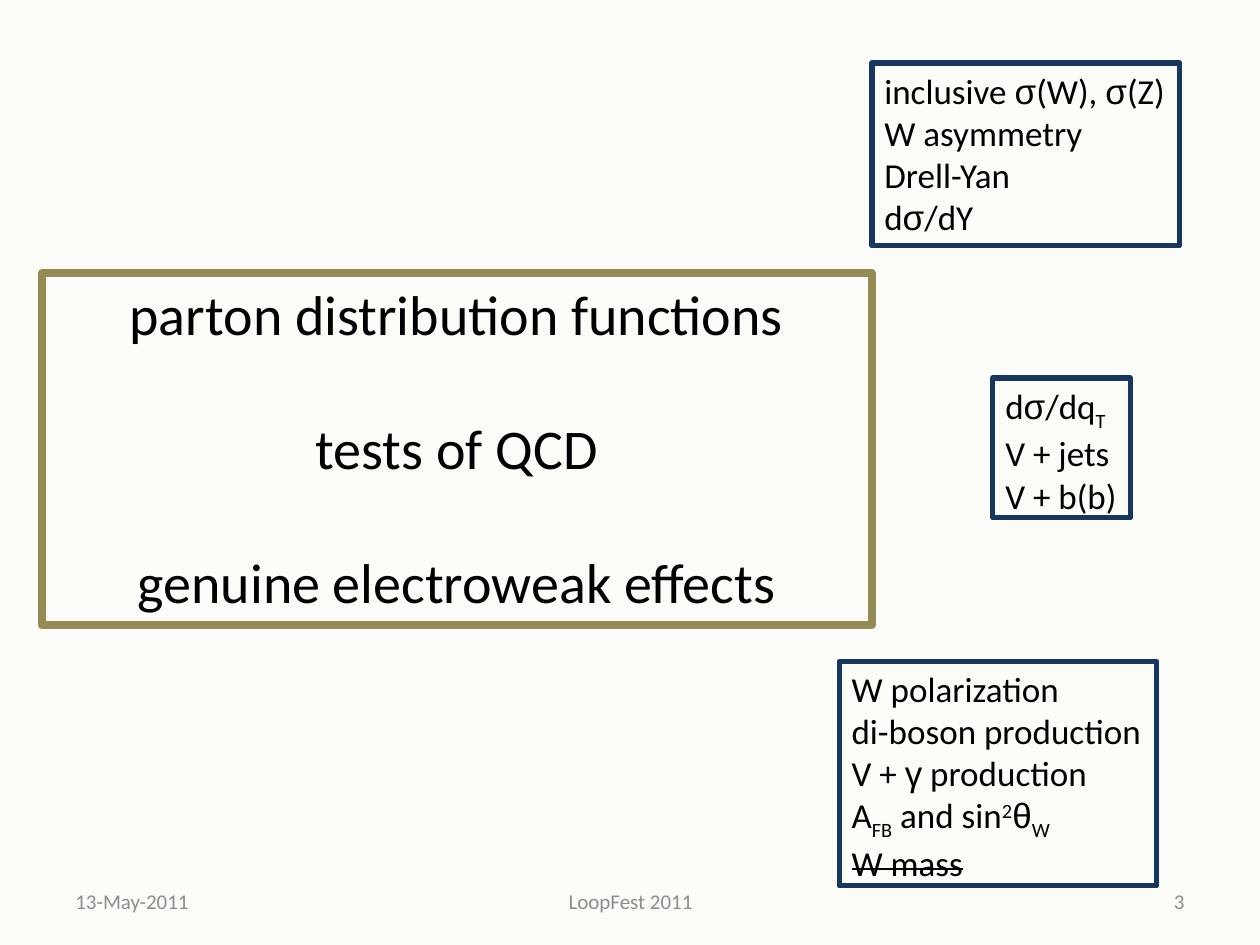
from dataclasses import dataclass

from pptx import Presentation
from pptx.dml.color import RGBColor
from pptx.enum.text import MSO_ANCHOR, MSO_AUTO_SIZE, PP_ALIGN
from pptx.util import Inches, Pt

LEFT, CENTER, RIGHT = PP_ALIGN.LEFT, PP_ALIGN.CENTER, PP_ALIGN.RIGHT
MIDDLE = MSO_ANCHOR.MIDDLE
GROW = MSO_AUTO_SIZE.SHAPE_TO_FIT_TEXT

PAPER = RGBColor(0xFB, 0xFB, 0xF8)
BLACK = RGBColor(0, 0, 0)
GRAY = RGBColor(0x8C, 0x8C, 0x8C)
OLIVE = RGBColor(0x94, 0x8A, 0x54)
NAVY = RGBColor(0x17, 0x37, 0x5E)


@dataclass
class Bit:
    text: str
    font: str | None = None
    base: int = 0
    strike: bool = False


@dataclass
class Box:
    at: tuple[float, float, float, float]
    lines: list[list[Bit]]
    size: int = 20
    color: RGBColor = BLACK
    align: PP_ALIGN = LEFT
    edge: RGBColor | None = NAVY
    width: float = 3
    gap: int = 0


def greek(text: str) -> Bit:
    return Bit(text, font="Arial")


def sub(text: str) -> Bit:
    return Bit(text, base=-25000)


def sup(text: str) -> Bit:
    return Bit(text, base=30000)


def foot(left: float, width: float, text: str, align: PP_ALIGN) -> Box:
    return Box((left, 6.95, width, 0.4), [[Bit(text)]], 12, GRAY, align, edge=None)


SIGMA = greek("σ")
BOXES = [
    foot(0.5, 2.33, "13-May-2011", LEFT),
    foot(3.42, 3.17, "LoopFest 2011", CENTER),
    foot(7.17, 2.33, "3", RIGHT),
    Box((0.33, 2.17, 6.59, 2.79),
        [[Bit("parton distribution functions")],
         [Bit("tests of QCD")],
         [Bit("genuine electroweak effects")]],
        size=32, align=CENTER, edge=OLIVE, width=4.5, gap=38),
    Box((6.92, 0.5, 2.44, 1.45),
        [[Bit("inclusive "), SIGMA, Bit("(W), "), SIGMA, Bit("(Z)")],
         [Bit("W asymmetry")],
         [Bit("Drell-Yan")],
         [Bit("d"), SIGMA, Bit("/dY")]]),
    Box((7.88, 3, 1.09, 1.11),
        [[Bit("d"), SIGMA, Bit("/dq"), sub("T")],
         [Bit("V + jets")],
         [Bit("V + b(b)")]]),
    Box((6.66, 5.25, 2.52, 1.78),
        [[Bit("W polarization")],
         [Bit("di-boson production")],
         [Bit("V + "), greek("γ"), Bit(" production")],
         [Bit("A"), sub("FB"), Bit(" and sin"), sup("2"), greek("θ"), sub("W")],
         [Bit("W mass", strike=True)]]),
]


def write(para, bits: list[Bit]) -> None:
    for bit in bits:
        run = para.add_run()
        run.text = bit.text
        if bit.font:
            run.font.name = bit.font
        props = run.font._element
        if bit.base:
            props.set("baseline", str(bit.base))
        if bit.strike:
            props.set("strike", "sngStrike")


def draw(slide, box: Box) -> None:
    shape = slide.shapes.add_textbox(*map(Inches, box.at))
    frame = shape.text_frame
    if box.edge is None:
        frame.word_wrap = True
        frame.vertical_anchor = MIDDLE
    else:
        frame.word_wrap = False
        frame.auto_size = GROW
        shape.line.color.rgb = box.edge
        shape.line.width = Pt(box.width)
    for i, bits in enumerate(box.lines):
        para = frame.add_paragraph() if i else frame.paragraphs[0]
        para.alignment = box.align
        para.font.name = "Calibri"
        para.font.size = Pt(box.size)
        para.font.color.rgb = box.color
        if i and box.gap:
            para.space_before = Pt(box.gap)
        write(para, bits)


def main() -> None:
    deck = Presentation()
    deck.slide_width, deck.slide_height = Inches(10), Inches(7.5)
    slide = deck.slides.add_slide(deck.slide_layouts[6])
    fill = slide.background.fill
    fill.solid()
    fill.fore_color.rgb = PAPER
    for box in BOXES:
        draw(slide, box)
    deck.save("out.pptx")


if __name__ == "__main__":
    main()
